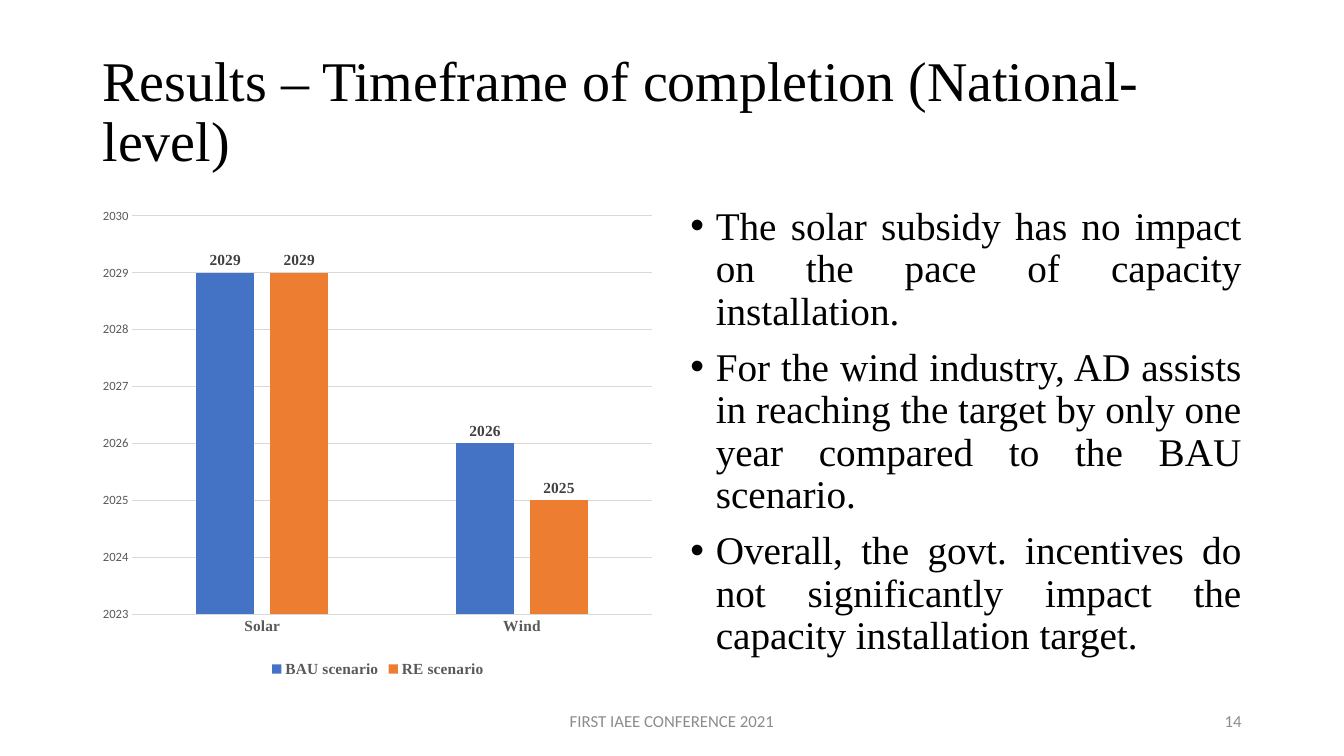
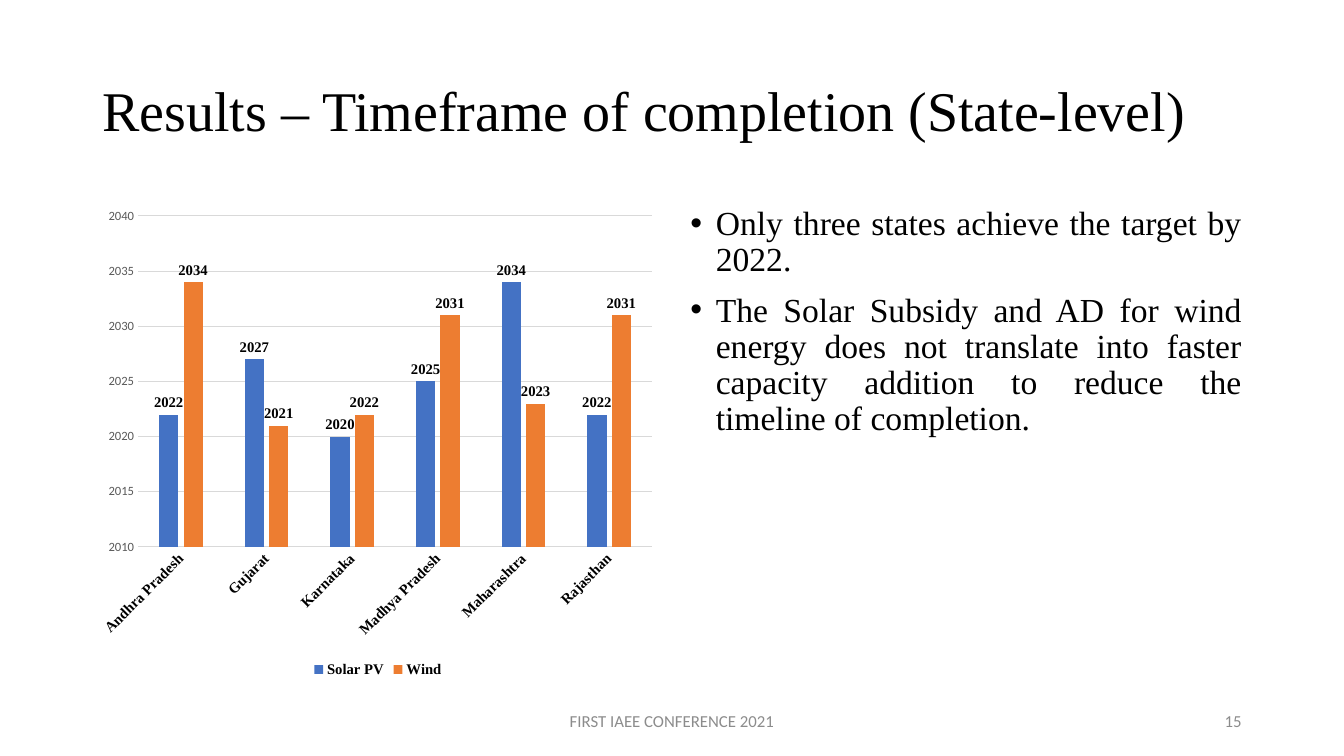
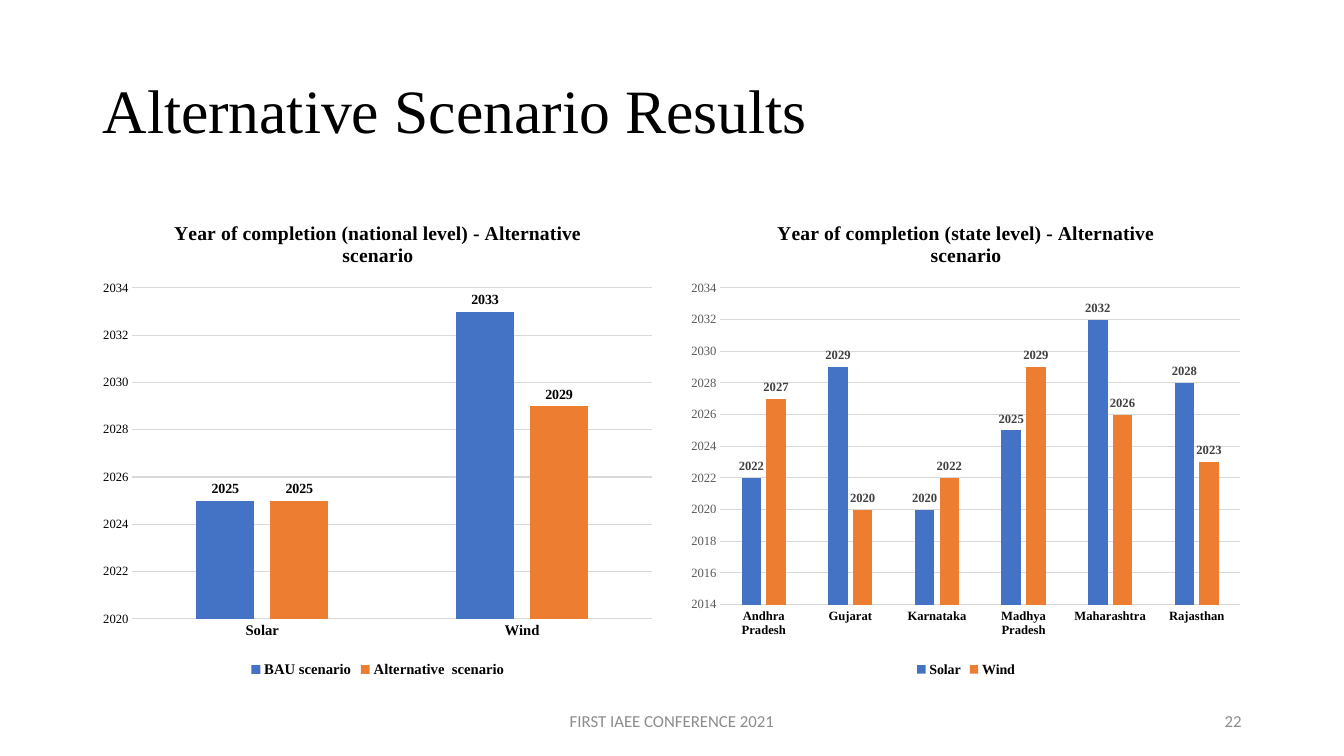
from lxml import etree
from pptx import Presentation
from pptx.chart.data import CategoryChartData
from pptx.dml.color import RGBColor
from pptx.enum.chart import XL_CHART_TYPE, XL_LABEL_POSITION, XL_LEGEND_POSITION, XL_TICK_MARK
from pptx.enum.text import MSO_ANCHOR, MSO_AUTO_SIZE, PP_ALIGN
from pptx.oxml.ns import qn
from pptx.util import Cm, Pt

COLUMN = XL_CHART_TYPE.COLUMN_CLUSTERED
OUTSIDE = XL_LABEL_POSITION.OUTSIDE_END
BOTTOM = XL_LEGEND_POSITION.BOTTOM
NO_TICK = XL_TICK_MARK.NONE
TOP, MIDDLE = MSO_ANCHOR.TOP, MSO_ANCHOR.MIDDLE
NO_FIT = MSO_AUTO_SIZE.NONE
LEFT, CENTER, RIGHT, JUSTIFY = PP_ALIGN.LEFT, PP_ALIGN.CENTER, PP_ALIGN.RIGHT, PP_ALIGN.JUSTIFY

HEX = {
    "black": "000000", "dark": "404040", "mid": "595959", "foot": "8C8C8C",
    "grid": "D9D9D9", "blue": "4472C4", "orange": "ED7D31",
}
SERIF, SANS = "Times New Roman", "Calibri"
FOOTER = "FIRST IAEE CONFERENCE 2021"

TITLE_BOX = (2.33, 1.02, 29.21, 3.68)
HALVES = [(2.33, 5.08, 14.39, 12.09), (17.15, 5.08, 14.39, 12.09)]
FOOT_BOX = (11.22, 17.65, 11.43, 1.02)
PAGE_BOX = (23.92, 17.65, 7.62, 1.02)

STATES = ["Andhra Pradesh", "Gujarat", "Karnataka", "Madhya Pradesh", "Maharashtra", "Rajasthan"]
TYPES = ["Solar", "Wind"]

SLIDES = [
    {
        "title": "Results – Timeframe of completion (National-level)", "size": 40, "page": "14",
        "charts": [{
            "cats": TYPES,
            "series": [("BAU scenario", [2029, 2026]), ("RE scenario", [2029, 2025])],
            "scale": (2023, 2030, 1), "plot": (0.07, 0.03, 0.91, 0.83),
            "cat": (11, "mid"), "val": (SANS, "mid"), "legend": (11, "mid"), "label": (11, "dark"),
        }],
        "points": [
            "The solar subsidy has no impact on the pace of capacity installation.",
            "For the wind industry, AD assists in reaching the target by only one year compared to the BAU scenario.",
            "Overall, the govt. incentives do not significantly impact the capacity installation target.",
        ],
        "point": 28,
    },
    {
        "title": "Results – Timeframe of completion (State-level)", "size": 40, "page": "15",
        "charts": [{
            "cats": STATES,
            "series": [("Solar PV", [2022, 2027, 2020, 2025, 2034, 2022]),
                       ("Wind", [2034, 2021, 2022, 2031, 2023, 2031])],
            "scale": (2010, 2040, 5), "plot": (0.08, 0.03, 0.9, 0.69), "turn": -45,
            "cat": (10.5, "black"), "val": (SANS, "mid"), "legend": (10.5, "black"), "label": (10.5, "black"),
        }],
        "points": [
            "Only three states achieve the target by 2022.",
            "The Solar Subsidy and AD for wind energy does not translate into faster capacity addition "
            "to reduce the timeline of completion.",
        ],
        "point": 24,
    },
    {
        "title": "Alternative Scenario Results", "size": 44, "page": "22",
        "charts": [
            {
                "title": "Year of completion (national level) - Alternative scenario",
                "cats": TYPES,
                "series": [("BAU scenario", [2025, 2033]), ("Alternative  scenario", [2025, 2029])],
                "scale": (2020, 2034, 2), "plot": (0.07, 0.18, 0.91, 0.69),
                "cat": (10.5, "black"), "val": (SERIF, "black"), "legend": (10.5, "black"), "label": (10, "black"),
            },
            {
                "title": "Year of completion (state level) - Alternative scenario",
                "cats": STATES,
                "series": [("Solar", [2022, 2029, 2020, 2025, 2032, 2028]),
                           ("Wind", [2027, 2020, 2022, 2029, 2026, 2023])],
                "scale": (2014, 2034, 2), "plot": (0.07, 0.18, 0.91, 0.66),
                "cat": (9, "black"), "val": (SERIF, "mid"), "legend": (10, "black"), "label": (9, "dark"),
            },
        ],
    },
]


def color(name):
    return RGBColor.from_string(HEX[name])


def style(font, size, tint, face=SERIF, bold=False):
    font.size, font.name, font.bold = Pt(size), face, bold
    font.color.rgb = color(tint)


def rule(line):
    line.color.rgb = color("grid")
    line.width = Pt(0.75)


def place(shape, box):
    shape.left, shape.top, shape.width, shape.height = map(Cm, box)


def write(shape, lines, size, tint, face, align, anchor):
    frame = shape.text_frame
    frame.word_wrap = True
    frame.auto_size = NO_FIT
    frame.vertical_anchor = anchor
    frame.text = "\n".join(lines)
    for para in frame.paragraphs:
        para.alignment = align
        for run in para.runs:
            style(run.font, size, tint, face)
    return frame.paragraphs


def add_text(slide, box, *args):
    return write(slide.shapes.add_textbox(*map(Cm, box)), *args)


def add_points(slide, box, lines, size):
    for para in add_text(slide, box, lines, size, "black", SERIF, JUSTIFY, TOP):
        para.line_spacing = 0.9
        para.space_before = Pt(10)
        props = para._p.get_or_add_pPr()
        props.set("marL", str(Cm(0.64)))
        props.set("indent", str(-Cm(0.64)))
        etree.SubElement(props, qn("a:buFont")).set("typeface", "Arial")
        etree.SubElement(props, qn("a:buChar")).set("char", "•")


def set_plot(chart, plot):
    area = chart.element.find(".//" + qn("c:plotArea"))
    for old in area.findall(qn("c:layout")):
        area.remove(old)
    layout = etree.Element(qn("c:layout"))
    area.insert(0, layout)
    manual = etree.SubElement(layout, qn("c:manualLayout"))
    pairs = [("layoutTarget", "inner"), ("xMode", "edge"), ("yMode", "edge"), *zip("xywh", plot)]
    for tag, val in pairs:
        etree.SubElement(manual, qn("c:" + tag)).set("val", str(val))


def add_chart(slide, box, item):
    data = CategoryChartData()
    data.categories = item["cats"]
    for name, vals in item["series"]:
        data.add_series(name, vals)
    chart = slide.shapes.add_chart(COLUMN, *map(Cm, box), data).chart
    style(chart.font, 10, "black", SANS)

    chart.has_title = "title" in item
    if chart.has_title:
        frame = chart.chart_title.text_frame
        frame.text = item["title"]
        style(frame.paragraphs[0].runs[0].font, 14, "black", bold=True)

    chart.has_legend = True
    chart.legend.position = BOTTOM
    chart.legend.include_in_layout = False
    style(chart.legend.font, *item["legend"], bold=True)

    cat, val = chart.category_axis, chart.value_axis
    for axis in (cat, val):
        axis.major_tick_mark = axis.minor_tick_mark = NO_TICK
    style(cat.tick_labels.font, *item["cat"], bold=True)
    rule(cat.format.line)
    turn = chart.element.find(".//" + qn("c:catAx")).find(".//" + qn("a:bodyPr"))
    turn.set("rot", str(item.get("turn", 0) * 60000))
    turn.set("vert", "horz")
    face, tint = item["val"]
    style(val.tick_labels.font, 9, tint, face)
    val.format.line.fill.background()
    rule(val.major_gridlines.format.line)
    val.minimum_scale, val.maximum_scale, val.major_unit = item["scale"]

    plot = chart.plots[0]
    plot.gap_width, plot.overlap = 219, -27
    plot.vary_by_categories = False
    for series, tint in zip(plot.series, ("blue", "orange")):
        series.format.fill.solid()
        series.format.fill.fore_color.rgb = color(tint)
        labels = series.data_labels
        labels.show_value = True
        labels.position = OUTSIDE
        style(labels.font, *item["label"], bold=True)
    set_plot(chart, item["plot"])


def add_slide(deck, item):
    slide = deck.slides.add_slide(deck.slide_layouts[5])
    title = slide.shapes.title
    place(title, TITLE_BOX)
    for para in write(title, [item["title"]], item["size"], "black", SERIF, LEFT, MIDDLE):
        para.line_spacing = 0.9
    for box, chart in zip(HALVES, item["charts"]):
        add_chart(slide, box, chart)
    if "points" in item:
        add_points(slide, HALVES[1], item["points"], item["point"])
    add_text(slide, FOOT_BOX, [FOOTER], 12, "foot", SANS, CENTER, MIDDLE)
    add_text(slide, PAGE_BOX, [item["page"]], 12, "foot", SANS, RIGHT, MIDDLE)


def main():
    deck = Presentation()
    deck.slide_width, deck.slide_height = Cm(33.87), Cm(19.05)
    for item in SLIDES:
        add_slide(deck, item)
    deck.save("out.pptx")


if __name__ == "__main__":
    main()
